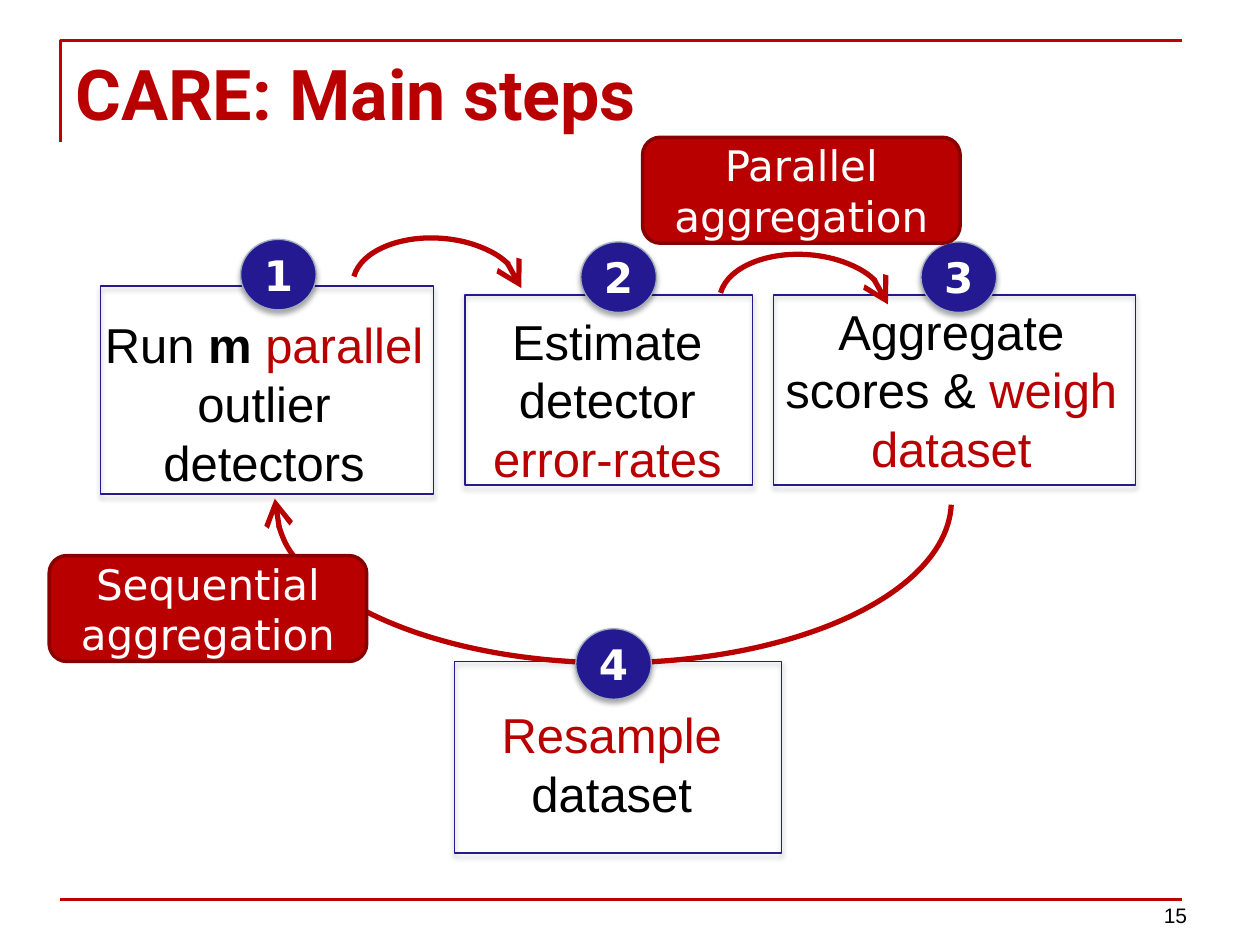
from dataclasses import dataclass

import pptx
import pptx.dml.color
import pptx.enum.shapes
import pptx.enum.text
import pptx.oxml
import pptx.oxml.ns
import pptx.util

Inches = pptx.util.Inches
Pt = pptx.util.Pt
RGB = pptx.dml.color.RGBColor.from_string
KIND = pptx.enum.shapes.MSO_SHAPE
ALIGN = pptx.enum.text.PP_ALIGN
ANCHOR = pptx.enum.text.MSO_ANCHOR
NS = pptx.oxml.ns.nsdecls("a")


@dataclass(frozen=True)
class Theme:
    red: str = "B90000"
    edge: str = "890000"
    rule: str = "C00000"
    blue: str = "251992"
    gray: str = "9FAEBD"
    black: str = "000000"
    white: str = "FFFFFF"
    head: str = "Roboto"
    body: str = "Arial"
    tag: str = "DejaVu Sans"
    title: int = 40
    step: int = 28
    label: int = 24
    page: int = 12


T = Theme()


@dataclass(frozen=True)
class Area:
    x: float
    y: float
    w: float
    h: float

    def emu(self) -> list:
        return [Inches(v) for v in (self.x, self.y, self.w, self.h)]


@dataclass(frozen=True)
class Run:
    text: str
    color: str = T.black
    bold: bool = False


@dataclass(frozen=True)
class Style:
    font: str
    size: int
    align: ALIGN = ALIGN.CENTER
    anchor: ANCHOR = ANCHOR.TOP


@dataclass(frozen=True)
class Step:
    box: Area
    area: Area
    lines: list
    badge: tuple


@dataclass(frozen=True)
class Arc:
    area: Area
    start: float
    end: float
    turn: float


@dataclass(frozen=True)
class Label:
    x: float
    y: float
    lines: list


HEAD = Style(T.head, T.title, ALIGN.LEFT, ANCHOR.BOTTOM)
PAGE = Style(T.body, T.page, ALIGN.RIGHT, ANCHOR.BOTTOM)
STEP = Style(T.body, T.step)
TAG = Style(T.tag, T.label, anchor=ANCHOR.MIDDLE)

STEPS = [
    Step(Area(0.8, 2.27, 2.64, 1.65), Area(0.68, 2.45, 2.83, 1.51),
         [[Run("Run "), Run("m ", bold=True), Run("parallel", T.red)],
          [Run("outlier detectors")]], (1.91, 1.9)),
    Step(Area(3.69, 2.34, 2.28, 1.51), Area(3.57, 2.42, 2.5, 1.51),
         [[Run("Estimate detector")], [Run("error-rates", T.red)]], (4.61, 1.92)),
    Step(Area(6.14, 2.34, 2.87, 1.51), Area(6.11, 2.34, 2.88, 1.51),
         [[Run("Aggregate scores & "), Run("weigh", T.red)],
          [Run("dataset", T.red)]], (7.31, 1.92)),
    Step(Area(3.61, 5.25, 2.59, 1.52), Area(3.56, 5.54, 2.59, 1.04),
         [[Run("Resample", T.red)], [Run("dataset")]], (4.57, 4.99)),
]
ARCS = [
    Arc(Area(2.8, 1.89, 1.34, 0.79), 110.44, 213.84, 3.7),
    Arc(Area(5.71, 2.02, 1.34, 0.79), 110.44, 213.84, 3.7),
    Arc(Area(2.18, 2.69, 5.37, 2.57), 108.39, 0.22, 180),
]
LABELS = [
    Label(5.1, 1.09, ["Parallel aggregation"]),
    Label(0.39, 4.41, ["Sequential", "aggregation"]),
]


def write(frame, lines: list, style: Style) -> None:
    frame.word_wrap = True
    frame.vertical_anchor = style.anchor
    for i, runs in enumerate(lines):
        para = frame.add_paragraph() if i else frame.paragraphs[0]
        para.alignment = style.align
        para.font.name = style.font
        para.font.size = Pt(style.size)
        for item in runs:
            run = para.add_run()
            run.text = item.text
            run.font.bold = item.bold
            run.font.color.rgb = RGB(item.color)


def add_text(slide, area: Area, lines: list, style: Style):
    box = slide.shapes.add_textbox(*area.emu())
    write(box.text_frame, lines, style)
    return box


def stroke(shape, color: str, width: float) -> None:
    shape.line.color.rgb = RGB(color)
    shape.line.width = Pt(width)


def add_shape(slide, kind: KIND, area: Area, line: str, width: float, fill: str = ""):
    """Draw a preset shape, hollow unless a fill is given."""
    shape = slide.shapes.add_shape(kind, *area.emu())
    shape.shadow.inherit = False
    stroke(shape, line, width)
    if fill:
        shape.fill.solid()
        shape.fill.fore_color.rgb = RGB(fill)
    else:
        shape.fill.background()
    return shape


def add_shade(shape) -> None:
    """Give the shape a soft shadow just below it."""
    shape._element.spPr.find(pptx.oxml.ns.qn("a:effectLst")).append(pptx.oxml.parse_xml(
        f'<a:outerShdw {NS} blurRad="{Pt(3.1)}" dist="{Pt(1.8)}" dir="5400000" '
        f'rotWithShape="0"><a:srgbClr val="{T.black}"><a:alpha val="35000"/>'
        '</a:srgbClr></a:outerShdw>'))


def add_step(slide, step: Step) -> None:
    add_shade(add_shape(slide, KIND.RECTANGLE, step.box, T.blue, 0.75))
    box = add_text(slide, step.area, step.lines, STEP)
    box.text_frame.auto_size = pptx.enum.text.MSO_AUTO_SIZE.SHAPE_TO_FIT_TEXT


def add_arc(slide, arc: Arc) -> None:
    shape = add_shape(slide, KIND.ARC, arc.area, T.red, 3)
    shape.adjustments[0] = arc.start
    shape.adjustments[1] = arc.end
    shape.rotation = arc.turn
    shape.line._get_or_add_ln().append(
        pptx.oxml.parse_xml(f'<a:tailEnd {NS} type="arrow" w="lg" len="lg"/>'))


def add_badge(slide, spot: tuple, number: int) -> None:
    shape = add_shape(slide, KIND.OVAL, Area(*spot, 0.6, 0.56), T.gray, 0.75, T.blue)
    add_shade(shape)
    frame = shape.text_frame
    frame.margin_left = frame.margin_right = 0
    write(frame, [[Run(str(number), T.white, True)]], TAG)


def add_label(slide, label: Label) -> None:
    area = Area(label.x, label.y, 2.52, 0.84)
    shape = add_shape(slide, KIND.ROUNDED_RECTANGLE, area, T.edge, 2, T.red)
    write(shape.text_frame, [[Run(line, T.white)] for line in label.lines], TAG)


def add_frame(slide) -> None:
    """Draw the corner rule, the foot rule, the title and the page number."""
    left, right, top = Inches(0.48), Inches(9.38), Inches(0.32)
    path = slide.shapes.build_freeform(left, Inches(1.13))
    path.add_line_segments([(left, top), (right, top)], close=False)
    corner = path.convert_to_shape()
    corner.shadow.inherit = False
    corner.fill.background()
    stroke(corner, T.rule, 2)
    foot = slide.shapes.add_connector(
        pptx.enum.shapes.MSO_CONNECTOR.STRAIGHT, left, Inches(7.14), right, Inches(7.14))
    stroke(foot, T.rule, 1.5)
    foot._element.spPr.append(pptx.oxml.parse_xml(f"<a:effectLst {NS}/>"))
    add_text(slide, Area(7.67, 6.91, 1.85, 0.5), [[Run("15")]], PAGE)
    add_text(slide, Area(0.5, 0.33, 8.88, 0.79),
             [[Run("CARE: Main steps", T.red, True)]], HEAD)


def main() -> None:
    deck = pptx.Presentation()
    deck.slide_width, deck.slide_height = Inches(10), Inches(7.5)
    slide = deck.slides.add_slide(deck.slide_layouts[6])
    add_frame(slide)
    for step in STEPS:
        add_step(slide, step)
    for arc in ARCS:
        add_arc(slide, arc)
    for number, step in enumerate(STEPS, 1):
        add_badge(slide, step.badge, number)
    for label in LABELS:
        add_label(slide, label)
    deck.save("out.pptx")


if __name__ == "__main__":
    main()
